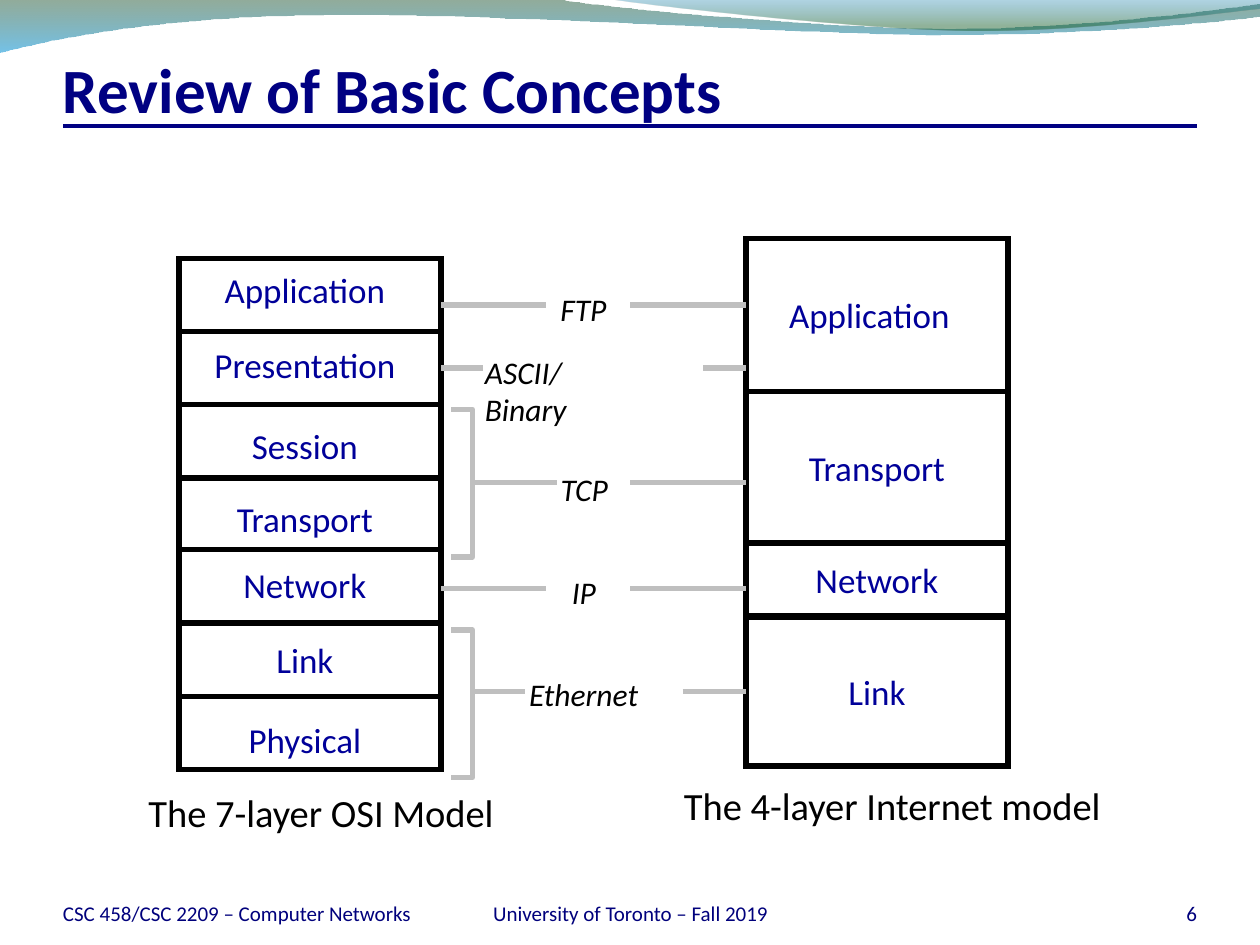
from typing import NamedTuple

from lxml import etree
from pptx import Presentation
from pptx import util as u
from pptx.dml.color import RGBColor
from pptx.enum import shapes, text
from pptx.oxml.ns import qn

COLOURS = {
    "title": "000082", "footer": "00007C", "layer": "000099", "black": "000000",
    "white": "FFFFFF", "link": "BFBFBF", "forest": "0F461E", "sky": "0090D6",
    "ocean": "0076AF", "green": "0D5821",
}
LEFT, CENTRE, RIGHT = text.PP_ALIGN.LEFT, text.PP_ALIGN.CENTER, text.PP_ALIGN.RIGHT
BOX_WIDTH, OSI_LEFT, INTERNET_LEFT = 2.08, 1.42, 5.92
OSI_HEIGHT, OSI_LABEL_CENTRE = 0.58, 2.42
OSI_RIGHT, BRACKET_LEFT, BRACKET_RIGHT = 3.5, 3.58, 3.75


class Layer(NamedTuple):
    name: str
    top: float
    height: float
    label_top: float = 0
    label_width: float = 0


class Protocol(NamedTuple):
    name: str
    y: float
    start: float
    left_end: float
    right_start: float
    label: tuple
    wrap: bool = False
    right_margin: float = 0.1


class Stop(NamedTuple):
    position: float
    colour: str
    alpha: int


OSI = [
    Layer("Application", 2.05, OSI_HEIGHT, 2.08, 1.5),
    Layer("Presentation", 2.63, OSI_HEIGHT, 2.68, 1.66),
    Layer("Session", 3.21, OSI_HEIGHT, 3.32, 1.06),
    Layer("Transport", 3.8, OSI_HEIGHT, 3.9, 1.32),
    Layer("Network", 4.36, OSI_HEIGHT, 4.42, 1.2),
    Layer("Link", 4.95, OSI_HEIGHT, 5.02, 0.68),
    Layer("Physical", 5.53, OSI_HEIGHT, 5.65, 1.12),
]
INTERNET = [
    Layer("Application", 1.89, 1.22, 2.28, 1.48),
    Layer("Transport", 3.11, 1.2),
    Layer("Network", 4.31, 0.58),
    Layer("Link", 4.9, 1.18),
]
PROTOCOLS = [
    Protocol("FTP", 2.42, OSI_RIGHT, 4.33, 5, (4.35, 2.25, 0.57, 0.4)),
    Protocol("ASCII/Binary", 2.92, OSI_RIGHT, 3.83, 5.58, (3.75, 2.75, 1.46, 0.7), True, 0.4),
    Protocol("TCP", 3.83, BRACKET_RIGHT, 4.42, 5, (4.35, 3.68, 0.58, 0.4)),
    Protocol("IP", 4.67, OSI_RIGHT, 4.33, 5, (4.44, 4.5, 0.39, 0.4)),
    Protocol("Ethernet", 5.49, BRACKET_RIGHT, 4.17, 5.42, (4.1, 5.31, 1.32, 0.4), True),
]
# Each wave: start point, then points (2 numbers) or Bezier segments (6 numbers)
WAVES = [
    ((0, -0.01),
     [(4.4, -0.01), (4.76, 0.06, 6.64, 0.23, 7.58, 0.23), (8.53, 0.23, 9.58, 0.09, 10, 0.03),
      (10.01, 0.13), (9.83, 0.16, 8.7, 0.28, 7.46, 0.28), (6.22, 0.27, 3.82, 0.1, 2.57, 0.12),
      (1.29, 0.13, 0.46, 0.3, -0.01, 0.42)],
     [Stop(0, "forest", 45), Stop(1, "sky", 55)]),
    ((4.79, -0.01),
     [(5.09, 0.04, 6.82, 0.23, 7.69, 0.24), (8.56, 0.25, 9.61, 0.11, 10, 0.07), (10, -0.01)],
     [Stop(0, "ocean", 30), Stop(0.8, "green", 45)]),
]


def colour(name: str) -> RGBColor:
    return RGBColor.from_string(COLOURS[name])


def write(shape, words: str, size: float, ink: str, align=LEFT, frame_format=None, **font_format):
    frame = shape.text_frame
    for name, value in (frame_format or {}).items():
        setattr(frame, name, value)
    para = frame.paragraphs[0]
    para.alignment = align
    span = para.add_run()
    span.text = words
    for name, value in {"name": "Calibri", "size": u.Pt(size), **font_format}.items():
        setattr(span.font, name, value)
    span.font.color.rgb = colour(ink)


def add_text(page, place: tuple, *args, **formats):
    box = page.shapes.add_textbox(*map(u.Inches, place))
    write(box, *args, **formats)


def growing(wrap: bool = False, right_margin: float = 0.1) -> dict:
    return {"word_wrap": wrap, "margin_right": u.Inches(right_margin),
            "auto_size": text.MSO_AUTO_SIZE.SHAPE_TO_FIT_TEXT}


def bottom_anchored(top_margin: float = 0) -> dict:
    return {"word_wrap": True, "vertical_anchor": text.MSO_ANCHOR.BOTTOM, "margin_left": 0,
            "margin_right": 0, "margin_bottom": 0, "margin_top": u.Inches(top_margin)}


def set_line(shape, ink: str, width: float):
    shape.line.color.rgb = colour(ink)
    shape.line.width = u.Pt(width)


def add_layer(page, left: float, layer: Layer):
    box = page.shapes.add_shape(
        shapes.MSO_SHAPE.RECTANGLE,
        *map(u.Inches, (left, layer.top, BOX_WIDTH, layer.height)))
    box.shadow.inherit = False
    box.fill.solid()
    box.fill.fore_color.rgb = colour("white")
    set_line(box, "black", 3)
    etree.SubElement(box.element.spPr.find(qn("a:ln")), qn("a:miter"), lim="800000")
    if not layer.label_width:
        write(box, layer.name, 20, "layer", CENTRE,
              {"word_wrap": False, "vertical_anchor": text.MSO_ANCHOR.MIDDLE})
    return box


def add_layer_label(page, centre: float, layer: Layer):
    place = (centre - layer.label_width / 2, layer.label_top, layer.label_width, 0.43)
    add_text(page, place, layer.name, 20, "layer", CENTRE, frame_format=growing())


def add_line(page, start: float, end: float, y: float, ink: str, width: float):
    line = page.shapes.add_connector(
        shapes.MSO_CONNECTOR.STRAIGHT, *map(u.Inches, (start, y, end, y)))
    set_line(line, ink, width)
    etree.SubElement(line.element.spPr, qn("a:effectLst"))
    return line


def add_outline(page, points: list, close: bool):
    corners = [(u.Inches(x), u.Inches(y)) for x, y in points]
    builder = page.shapes.build_freeform(*corners[0])
    builder.add_line_segments(corners[1:], close=close)
    outline = builder.convert_to_shape()
    outline.shadow.inherit = False
    return outline


def add_bracket(page, top: float, height: float = 1.17):
    bottom = top + height
    bracket = add_outline(page, [(BRACKET_LEFT, top), (BRACKET_RIGHT, top),
                                 (BRACKET_RIGHT, bottom), (BRACKET_LEFT, bottom)], False)
    bracket.fill.background()
    set_line(bracket, "link", 3)


def bend(outline, segments: list):
    """Merge the three straight steps of each Bezier segment into one curve."""
    steps = iter(list(outline.element.spPr.iter(qn("a:lnTo"))))
    for segment in segments:
        step = next(steps)
        if len(segment) == 2:
            continue
        curve = etree.Element(qn("a:cubicBezTo"))
        step.addprevious(curve)
        for part in (step, next(steps), next(steps)):
            curve.append(part[0])
            part.getparent().remove(part)


def add_wave(page, start: tuple, segments: list, stops: list):
    points = [start] + [segment[i:i + 2] for segment in segments
                        for i in range(0, len(segment), 2)]
    wave = add_outline(page, points, True)
    bend(wave, segments)
    wave.line.fill.background()
    wave.fill.gradient()
    wave.fill.gradient_angle = 270
    for target, stop in zip(wave.fill.gradient_stops, stops):
        target.position = stop.position
        target.color.rgb = colour(stop.colour)
    for node, stop in zip(wave.element.spPr.iter(qn("a:srgbClr")), stops):
        etree.SubElement(node, qn("a:alpha"), val=str(stop.alpha * 1000))


def main():
    deck = Presentation()
    deck.slide_width, deck.slide_height = u.Inches(10), u.Inches(7.5)
    page = deck.slides.add_slide(deck.slide_layouts[6])
    for wave in WAVES:
        add_wave(page, *wave)
    add_line(page, 0.5, 9.5, 1, "title", 2.25)
    add_text(page, (0.5, 0.33, 9, 0.67), "Review of Basic Concepts", 36, "title",
             frame_format=bottom_anchored(0.05), bold=True)
    for left, width, words, align in (
            (0.5, 2.83, "CSC 458/CSC 2209 – Computer Networks", LEFT),
            (3.42, 3.17, "University of Toronto – Fall 2019", CENTRE),
            (8.67, 0.83, "6", RIGHT)):
        add_text(page, (left, 6.95, width, 0.4), words, 12, "footer", align,
                 frame_format=bottom_anchored())

    osi = {layer.name: add_layer(page, OSI_LEFT, layer) for layer in OSI}
    internet = {layer.name: add_layer(page, INTERNET_LEFT, layer) for layer in INTERNET}
    for layer in OSI:
        add_layer_label(page, OSI_LABEL_CENTRE, layer)
    add_layer_label(page, 6.9, INTERNET[0])
    for place, words in (((1.08, 6.21, 2.96, 0.47), "The 7-layer OSI Model"),
                         ((5.33, 6.16, 3.53, 0.47), "The 4-layer Internet model")):
        add_text(page, place, words, 22, "black", frame_format=growing())

    for top in (3.25, 5):
        add_bracket(page, top)
    for protocol in PROTOCOLS:
        add_text(page, protocol.label, protocol.name, 18, "black", italic=True,
                 frame_format=growing(protocol.wrap, protocol.right_margin))
        left = add_line(page, protocol.start, protocol.left_end, protocol.y, "link", 3)
        right = add_line(page, protocol.right_start, INTERNET_LEFT, protocol.y, "link", 3)
        if protocol.name == "ASCII/Binary":
            left.begin_connect(osi["Presentation"], 3)
        elif protocol.name == "Ethernet":
            right.end_connect(internet["Link"], 1)
    deck.save("out.pptx")


if __name__ == "__main__":
    main()
